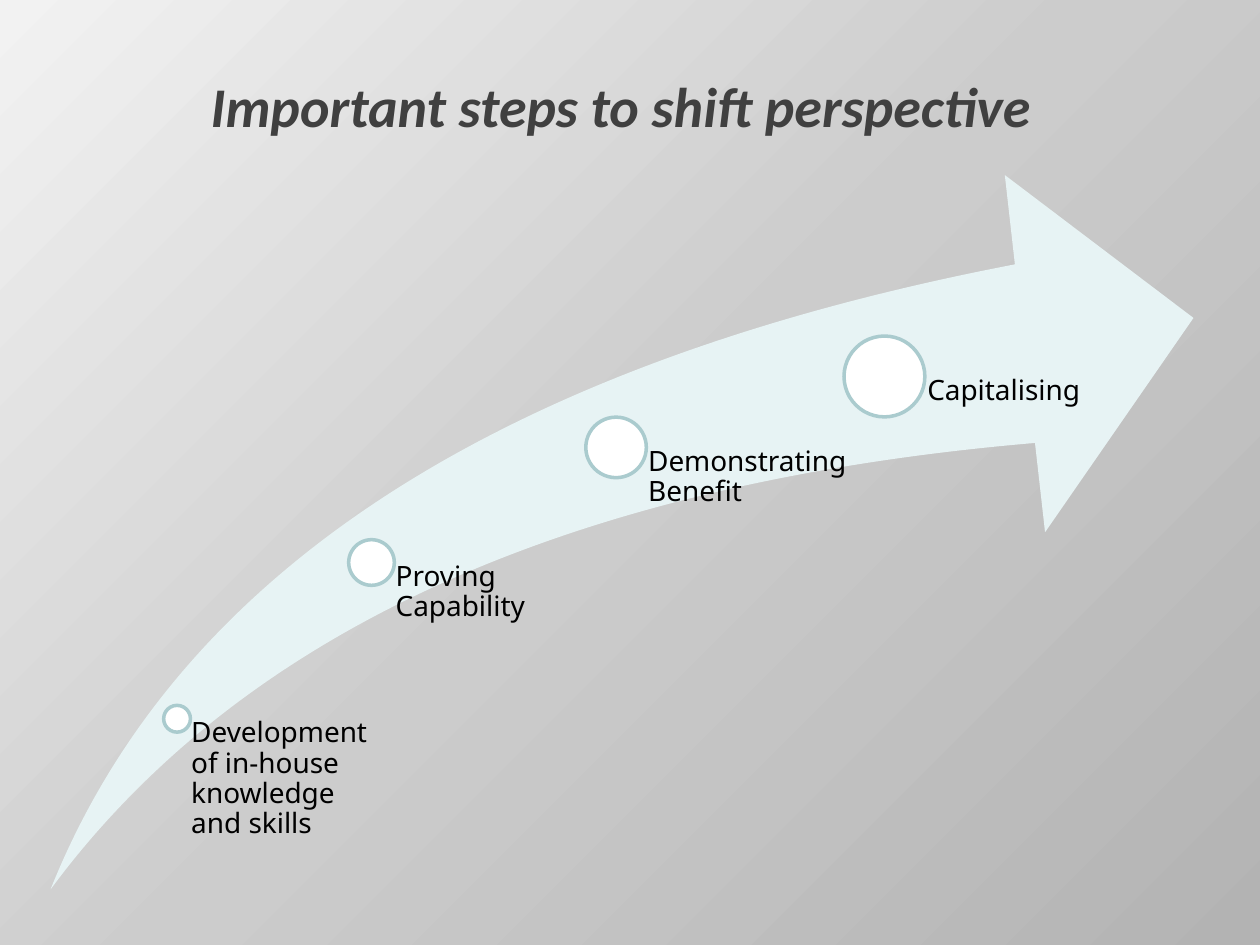
from pptx import Presentation
from pptx.dml.color import RGBColor as RGB
from pptx.enum.shapes import MSO_SHAPE as SHAPE
from pptx.enum.text import MSO_ANCHOR as ANCHOR, PP_ALIGN as ALIGN
from pptx.oxml import parse_xml
from pptx.oxml.ns import nsdecls, qn
from pptx.util import Cm, Pt

COLORS = {
    "light": "F2F2F2", "middle": "CCCCCC", "dark": "B3B3B3",
    "arrow": "E7F3F4", "ring": "AACBCE", "dot": "FFFFFF",
    "title": "404040", "text": "000000",
}
STEPS = [
    ("Development of in-house knowledge and skills", 3.57, 14.49, 0.54, 3.94),
    ("Proving Capability", 7.49, 11.34, 0.92, 4.85),
    ("Demonstrating Benefit", 12.42, 9.02, 1.22, 4.85),
    ("Capitalising", 17.83, 7.59, 1.63, 4.85),
]
ARROW_BOX = (1.02, 3.53, 23.04, 14.4)
ARROW_BOTTOM = ARROW_BOX[1] + ARROW_BOX[3]


def color(name):
    """Return the named palette colour."""
    return RGB.from_string(COLORS[name])


def set_background(s):
    """Shade the slide from its top left corner."""
    s.background.fill.gradient()
    old = s._element.find(".//" + qn("a:gradFill"))
    stops = "".join(
        f'<a:gs pos="{pos}"><a:srgbClr val="{COLORS[name]}"/></a:gs>'
        for pos, name in ((0, "light"), (50000, "middle"), (100000, "dark")))
    new = parse_xml(
        f'<a:gradFill {nsdecls("a")} rotWithShape="1"><a:gsLst>{stops}</a:gsLst>'
        '<a:path path="circle"><a:fillToRect r="100000" b="100000"/></a:path>'
        '</a:gradFill>')
    old.getparent().replace(old, new)


def write(tf, text, font, size, name, align=ALIGN.LEFT, spacing=None, **style):
    """Write one formatted paragraph."""
    tf.word_wrap = True
    p = tf.paragraphs[0]
    p.alignment, p.line_spacing = align, spacing
    r = p.add_run()
    r.text = text
    r.font.name, r.font.size = font, Pt(size)
    r.font.color.rgb = color(name)
    for key, value in style.items():
        setattr(r.font, key, value)


def add_shape(shapes, kind, box, fill, line=None):
    """Add a flat filled shape with an optional outline."""
    sp = shapes.add_shape(kind, *map(Cm, box))
    sp.shadow.inherit = False
    sp.fill.solid()
    sp.fill.fore_color.rgb = color(fill)
    if line:
        sp.line.color.rgb = color(line)
        sp.line.width = Pt(2)
    else:
        sp.line.fill.background()
    return sp


def add_step(shapes, text, x, y, size, width):
    """Add a dot centred on x, y and the label hanging from its centre."""
    add_shape(shapes, SHAPE.OVAL, (x - size / 2, y - size / 2, size, size),
              "dot", "ring")
    tb = shapes.add_textbox(Cm(x), Cm(y), Cm(width), Cm(ARROW_BOTTOM - y))
    tf = tb.text_frame
    tf.margin_left = Cm(size * 0.53)
    tf.margin_top = tf.margin_right = tf.margin_bottom = 0
    write(tf, text, "Noto Sans", 16, "text", spacing=0.9)


def add_title(s, text):
    """Place and format the title."""
    sp = s.shapes.title
    sp.left, sp.top, sp.width, sp.height = map(Cm, (1.09, 0.53, 22.86, 3.18))
    sp.text_frame.vertical_anchor = ANCHOR.MIDDLE
    write(sp.text_frame, text, "Calibri", 32, "title", ALIGN.CENTER,
          bold=True, italic=True)


def main():
    """Build and save the slide."""
    prs = Presentation()
    prs.slide_width, prs.slide_height = Cm(25.4), Cm(19.05)
    s = prs.slides.add_slide(prs.slide_layouts[5])
    set_background(s)
    add_title(s, "Important steps to shift perspective")
    shapes = s.shapes.add_group_shape().shapes
    arrow = add_shape(shapes, SHAPE.SWOOSH_ARROW, ARROW_BOX, "arrow")
    arrow.adjustments[0] = arrow.adjustments[1] = 0.25
    for step in STEPS:
        add_step(shapes, *step)
    prs.save("out.pptx")


if __name__ == "__main__":
    main()
